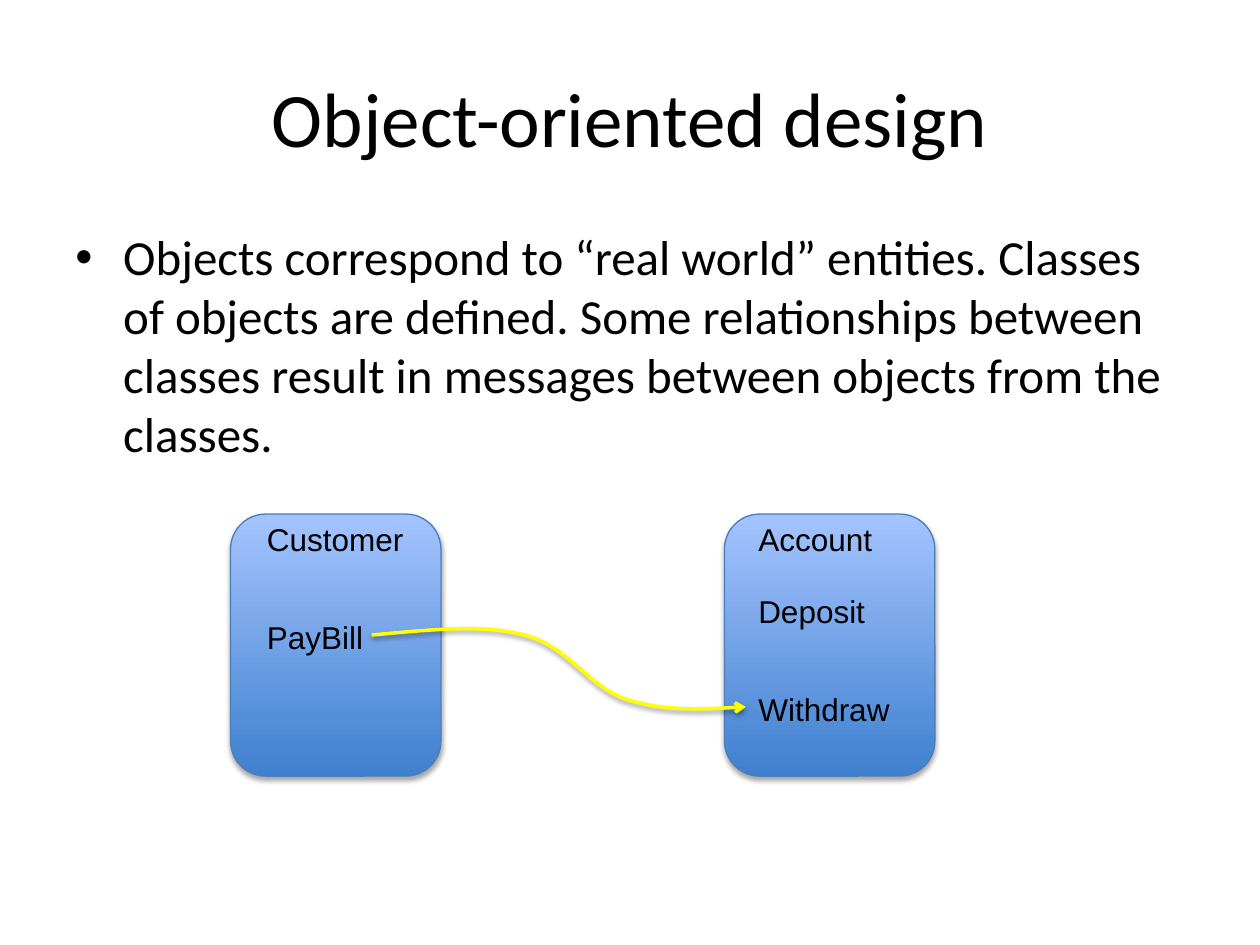
import pptx
import pptx.dml.color
import pptx.enum.shapes
import pptx.enum.text
import pptx.oxml
import pptx.oxml.ns
import pptx.util
from pptx.util import Inches

COLORS = {"text": "000000", "box_bottom": "3F80CE", "box_top": "A4C4FF",
          "box_line": "4B7EBC", "message": "FFFF00", "shadow": "000000"}

TITLE = "Object-oriented design"
BODY = ("Objects correspond to “real world” entities. Classes of objects are defined. "
        "Some relationships between classes result in messages between objects "
        "from the classes.")

BOX_TOP, BOX_WIDTH, BOX_HEIGHT = 4.08, 1.67, 2.08
LABEL_HEIGHT = 0.4
# Each class: box left, label left, then labels as (text, top, width)
CLASSES = [
    (1.83, 2.02, [("Customer", 4.08, 1.3), ("PayBill", 4.86, 0.97)]),
    (5.75, 5.92, [("Account", 4.08, 1.11), ("Deposit", 4.65, 1.06),
                  ("Withdraw", 5.43, 1.25)]),
]
# Start point, then two control points and an end point for each curve
MESSAGE_CURVE = [
    (2.95, 5.04),
    (3.39, 5.0), (3.83, 4.95), (4.16, 5.04),
    (4.5, 5.12), (4.67, 5.45), (4.97, 5.55),
    (5.26, 5.64), (5.59, 5.63), (5.92, 5.61),
]


def color(name):
    return pptx.dml.color.RGBColor.from_string(COLORS[name])


def xml(markup):
    """Parse one element, given with its a: prefix."""
    head, tail = markup.split(" ", 1)
    return pptx.oxml.parse_xml(f"{head} {pptx.oxml.ns.nsdecls('a')} {tail}")


def add_text(slide, text, box, size=18, font="Arial", align="LEFT", anchor="TOP",
             wrap=True, bullet=None, indent=0, space_before=0):
    shape = slide.shapes.add_textbox(*map(Inches, box))
    frame = shape.text_frame
    frame.word_wrap = wrap
    frame.vertical_anchor = pptx.enum.text.MSO_ANCHOR[anchor]
    paragraph = frame.paragraphs[0]
    paragraph.alignment = pptx.enum.text.PP_ALIGN[align]
    paragraph.space_before = pptx.util.Pt(space_before)
    if bullet:
        properties = paragraph._p.get_or_add_pPr()
        properties.set("marL", str(Inches(indent)))
        properties.set("indent", str(-Inches(indent)))
        properties.append(xml('<a:buFont typeface="Arial"/>'))
        properties.append(xml(f'<a:buChar char="{bullet}"/>'))
    run = paragraph.add_run()
    run.text = text
    run.font.size = pptx.util.Pt(size)
    run.font.name = font
    run.font.color.rgb = color("text")


def add_shadow(shape, opacity, distance):
    shape.shadow.inherit = False
    effects = shape._element.spPr.find(pptx.oxml.ns.qn("a:effectLst"))
    effects.append(xml(
        f'<a:outerShdw blurRad="{pptx.util.Pt(3.1)}" dist="{pptx.util.Pt(distance)}" '
        f'dir="5400000" rotWithShape="0"><a:srgbClr val="{COLORS["shadow"]}">'
        f'<a:alpha val="{opacity * 1000}"/></a:srgbClr></a:outerShdw>'))


def set_line(shape, name, width):
    shape.line.color.rgb = color(name)
    shape.line.width = pptx.util.Pt(width)


def add_class_box(slide, left):
    shape = slide.shapes.add_shape(
        pptx.enum.shapes.MSO_SHAPE.ROUNDED_RECTANGLE,
        *map(Inches, (left, BOX_TOP, BOX_WIDTH, BOX_HEIGHT)))
    shape.fill.gradient()
    shape.fill.gradient_angle = 90
    for stop, name in zip(shape.fill.gradient_stops, ("box_bottom", "box_top")):
        stop.color.rgb = color(name)
    set_line(shape, "box_line", 0.75)
    add_shadow(shape, opacity=35, distance=1.8)


def add_curved_arrow(slide, points):
    """Draw an open outline and turn each three of its segments into a Bézier curve."""
    start, *rest = [(Inches(x), Inches(y)) for x, y in points]
    builder = slide.shapes.build_freeform(*start)
    builder.add_line_segments(rest, close=False)
    shape = builder.convert_to_shape()
    segments = list(shape._element.iter(pptx.oxml.ns.qn("a:lnTo")))
    for first in range(0, len(segments), 3):
        curve = xml("<a:cubicBezTo />")
        segments[first].addprevious(curve)
        for segment in segments[first:first + 3]:
            curve.append(segment[0])
            segment.getparent().remove(segment)
    shape.fill.background()
    set_line(shape, "message", 2)
    shape.line._get_or_add_ln().append(xml('<a:tailEnd type="arrow"/>'))
    add_shadow(shape, opacity=38, distance=1.6)


def main():
    presentation = pptx.Presentation()
    presentation.slide_width, presentation.slide_height = Inches(10), Inches(7.5)
    slide = presentation.slides.add_slide(presentation.slide_layouts[6])

    add_text(slide, TITLE, (0.5, 0.3, 9, 1.25), size=44, font="Calibri",
             align="CENTER", anchor="MIDDLE")
    add_text(slide, BODY, (0.5, 1.75, 9, 4.95), size=28, font="Calibri",
             bullet="•", indent=0.38, space_before=5.6)
    for box_left, label_left, labels in CLASSES:
        add_class_box(slide, box_left)
        for text, top, width in labels:
            add_text(slide, text, (label_left, top, width, LABEL_HEIGHT), wrap=False)
    add_curved_arrow(slide, MESSAGE_CURVE)

    presentation.save("out.pptx")


if __name__ == "__main__":
    main()
